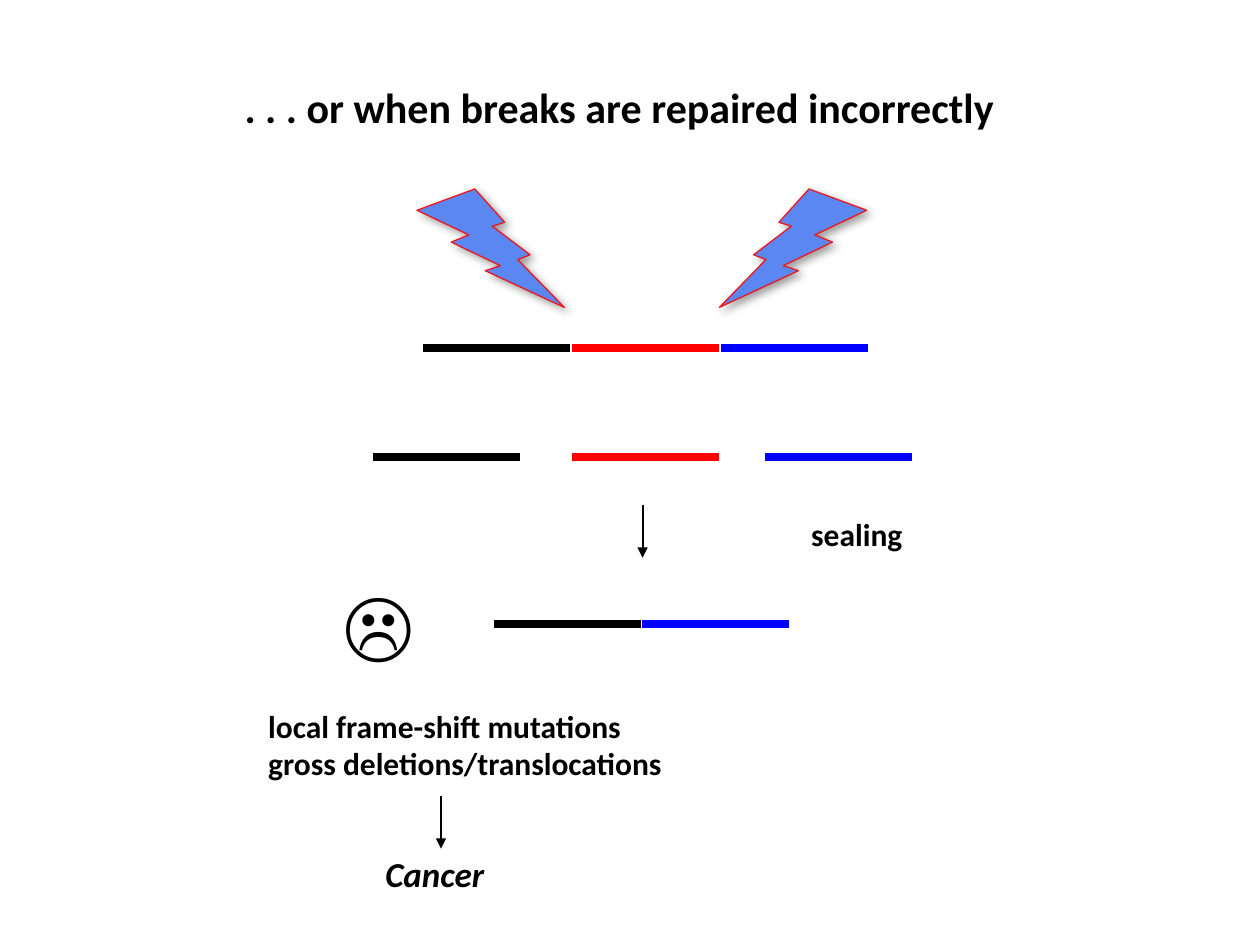
"""Build a slide on how incorrectly repaired DNA breaks lead to cancer."""
from lxml import etree
from pptx import Presentation
from pptx.dml.color import RGBColor
from pptx.enum import shapes, text
from pptx.oxml import ns
from pptx.util import Pt

BLACK = RGBColor(0x00, 0x00, 0x00)
RED = RGBColor(0xFF, 0x00, 0x00)
BLUE = RGBColor(0x00, 0x00, 0xFF)
BOLT_FILL = RGBColor(0x5B, 0x87, 0xF2)
BOLT_LINE = RGBColor(0xED, 0x18, 0x1E)

TITLE = ". . . or when breaks are repaired incorrectly"
LABELS = [
    ((59, 33.8, 589.7, 54), [TITLE], "Calibri", 24, True, False, True),
    ((189.4, 325.4, 51.8, 59.8), ["☹"], "Times New Roman", 44, False, False, False),
    ((146.2, 400.3, 247.7, 79.2),
     ["local frame-shift mutations", "gross deletions/translocations"],
     "Calibri", 18, True, False, False),
    ((213.1, 483.8, 76.3, 31), ["Cancer"], "Calibri", 20, True, True, False),
    ((456.5, 290.9, 118.1, 36), ["sealing"], "Calibri", 18, True, False, False),
]
SEGMENT_LENGTH = 84
SEGMENT_ROWS = [
    (198.7, [(241.9, BLACK), (326.9, RED), (412, BLUE)]),
    (261.4, [(213.1, BLACK), (326.9, RED), (437.4, BLUE)]),
    (356.4, [(282.5, BLACK), (367, BLUE)]),
]
ARROWS = [(367.2, 288.7), (252, 455)]
ARROW_LENGTH = 30
BOLTS = [(238.3, False), (411.1, True)]
BOLT_TOP, BOLT_WIDTH, BOLT_HEIGHT = 108, 84.2, 67.7
SHADOW = (
    f'<a:effectLst {ns.nsdecls("a")}>'
    f'<a:outerShdw blurRad="{Pt(5)}" dist="{Pt(3)}" dir="2700000" rotWithShape="0">'
    '<a:srgbClr val="808080"><a:alpha val="75000"/></a:srgbClr>'
    '</a:outerShdw></a:effectLst>'
)


def add_label(slide, box, lines, font_name, size, bold, italic, centred):
    frame = slide.shapes.add_textbox(*map(Pt, box)).text_frame
    frame.word_wrap = True
    frame.text = "\n".join(lines)
    if centred:
        frame.vertical_anchor = text.MSO_ANCHOR.MIDDLE
    for paragraph in frame.paragraphs:
        paragraph.alignment = text.PP_ALIGN.CENTER if centred else text.PP_ALIGN.LEFT
        for run in paragraph.runs:
            run.font.name = font_name
            run.font.size = Pt(size)
            run.font.bold = bold
            run.font.italic = italic
            run.font.color.rgb = BLACK


def add_line(slide, start, end, color, width):
    line = slide.shapes.add_connector(
        shapes.MSO_CONNECTOR.STRAIGHT, *map(Pt, start + end))
    line.line.color.rgb = color
    line.line.width = Pt(width)
    etree.SubElement(line._element.spPr, ns.qn("a:effectLst"))
    return line


def add_bolt(slide, left, mirrored):
    bolt = slide.shapes.add_shape(
        shapes.MSO_SHAPE.LIGHTNING_BOLT,
        Pt(left), Pt(BOLT_TOP), Pt(BOLT_WIDTH), Pt(BOLT_HEIGHT))
    bolt.fill.solid()
    bolt.fill.fore_color.rgb = BOLT_FILL
    bolt.line.color.rgb = BOLT_LINE
    bolt.line.width = Pt(0.75)
    properties = bolt._element.spPr
    properties.append(etree.fromstring(SHADOW))
    if mirrored:
        properties.find(ns.qn("a:xfrm")).set("flipH", "1")


def main():
    presentation = Presentation()
    presentation.slide_width, presentation.slide_height = Pt(720), Pt(540)
    slide = presentation.slides.add_slide(presentation.slide_layouts[6])
    for label in LABELS:
        add_label(slide, *label)
    for left, mirrored in BOLTS:
        add_bolt(slide, left, mirrored)
    for y, segments in SEGMENT_ROWS:
        for x, color in segments:
            add_line(slide, (x, y), (x + SEGMENT_LENGTH, y), color, 4.5)
    for x, y in ARROWS:
        arrow = add_line(slide, (x, y), (x, y + ARROW_LENGTH), BLACK, 1.25)
        etree.SubElement(arrow.line._get_or_add_ln(), ns.qn("a:tailEnd"), type="triangle")
    presentation.save("out.pptx")


if __name__ == "__main__":
    main()
